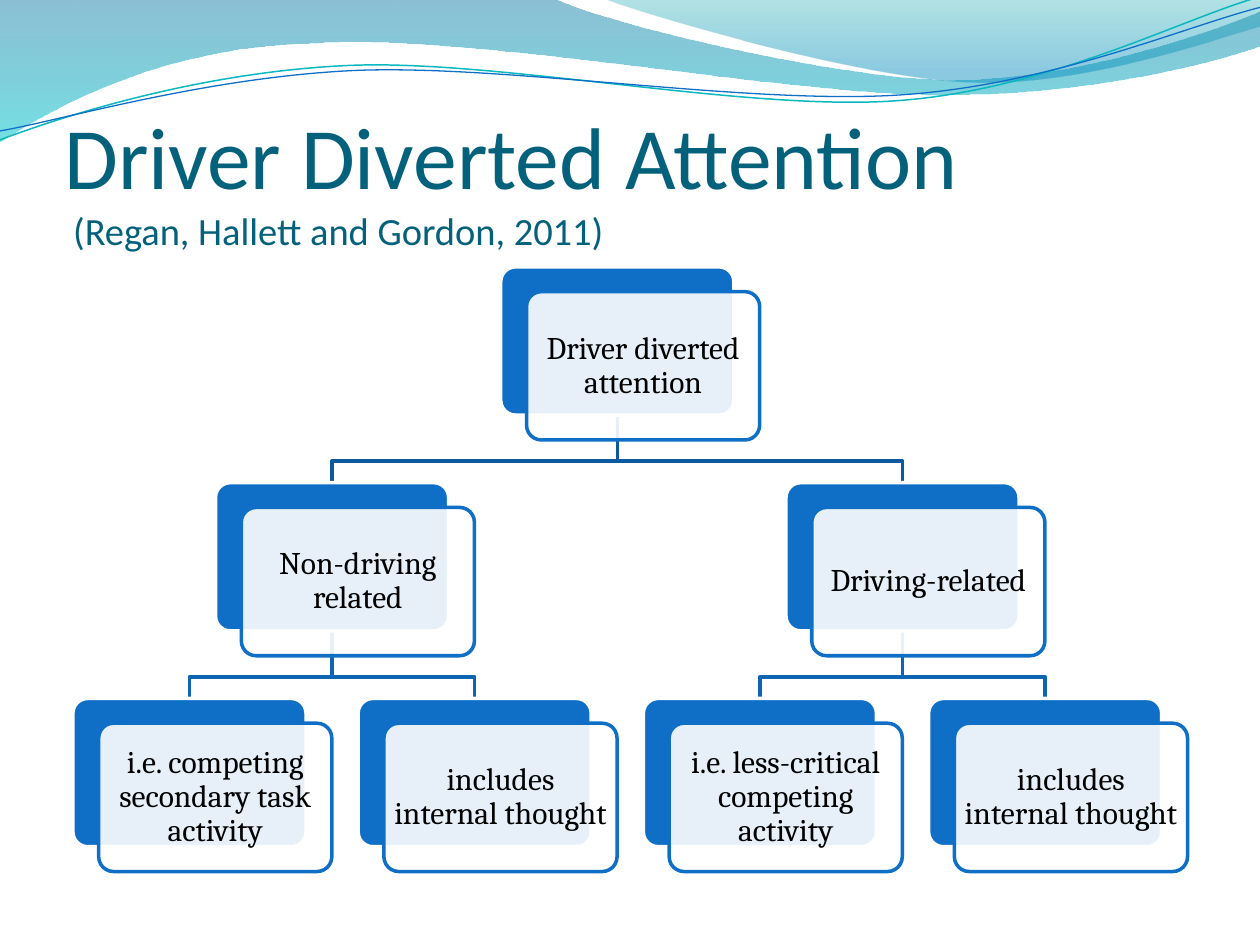
import pptx
import pptx.util
from pptx.dml.color import RGBColor
from pptx.enum.shapes import MSO_SHAPE
from pptx.enum.text import MSO_ANCHOR, PP_ALIGN
from pptx.oxml.ns import qn
from lxml import etree

Cm = pptx.util.Cm
Pt = pptx.util.Pt

WHITE = RGBColor(0xFF, 0xFF, 0xFF)
BLACK = RGBColor(0x00, 0x00, 0x00)
BLUE = RGBColor(0x0F, 0x6F, 0xC6)
TITLE_TEAL = RGBColor(0x04, 0x61, 0x7B)
LINE_TEAL = RGBColor(0x0A, 0xB8, 0xBF)
WAVE_BLUE = RGBColor(0x00, 0x74, 0xA1)
WAVE_CYAN = RGBColor(0x00, 0xC6, 0xCF)
CREST_TEAL = RGBColor(0x00, 0xA1, 0xA9)
CREST_BLUE = RGBColor(0x00, 0x8B, 0xBF)
LINK_COLORS = {1: RGBColor(0x0C, 0x59, 0x9F), 2: RGBColor(0x0E, 0x65, 0xB4)}

TITLE_LINES = [("Driver Diverted Attention", 50), (" (Regan, Hallett and Gordon, 2011)", 22)]

# text, column, level, parent
NODES = [
    ("Driver diverted attention", 1.5, 0, None),
    ("Non-driving related", 0.5, 1, 0),
    ("Driving-related", 2.5, 1, 0),
    ("i.e. competing secondary task activity", 0, 2, 1),
    ("includes internal thought", 1, 2, 1),
    ("i.e. less-critical competing activity", 2, 2, 2),
    ("includes internal thought", 3, 2, 2),
]

WAVES = [
    ([[(0, 0)], [(11.18, -0.03)],
      [(12.09, 0.43), (16.87, 1.6), (19.25, 1.6)],
      [(21.67, 1.6), (24.33, 0.66), (25.4, 0.23)],
      [(25.43, 0.91)],
      [(24.97, 1.12), (22.1, 1.93), (18.95, 1.91)],
      [(15.8, 1.91), (9.7, 0.71), (6.53, 0.86)],
      [(3.28, 0.91), (1.17, 2.11), (-0.03, 2.87)]],
     [(0, WAVE_BLUE, 45), (1, WAVE_CYAN, 55)]),
    ([[(12.17, -0.03)],
      [(12.93, 0.28), (17.32, 1.57), (19.53, 1.65)],
      [(21.74, 1.75), (24.41, 0.81), (25.4, 0.53)],
      [(25.4, 0)]],
     [(0, CREST_TEAL, 30), (0.8, CREST_BLUE, 45)]),
]

STRANDS = [
    ([[(0, 2.82)],
      [(1.22, 2.36), (4.01, 1.45), (7.04, 1.32)],
      [(10.03, 1.19), (15.06, 2.26), (18.11, 2.03)],
      [(21.16, 1.8), (23.83, 0.38), (25.35, -0.05)]], LINE_TEAL, 0.85),
    ([[(0, 2.64)],
      [(1.19, 2.44), (4.17, 1.55), (7.19, 1.42)],
      [(10.24, 1.3), (15.16, 2.13), (18.21, 1.91)],
      [(21.23, 1.7), (23.9, 0.53), (25.4, 0.15)]], BLUE, 0.75),
]

LEFT, TOP = 1.47, 5.38
COLUMN_STEP, LEVEL_STEP = 5.75, 4.35
BOX_WIDTH, BOX_HEIGHT = 4.7, 2.99
PANEL_SHIFT = (0.52, 0.5)
PANEL_MARGIN = 0.09
BEND = 0.68


def add_outline(slide, segments, close):
    vertices = [(Cm(x), Cm(y)) for segment in segments for x, y in segment]
    builder = slide.shapes.build_freeform(*vertices[0])
    builder.add_line_segments(vertices[1:], close=close)
    shape = builder.convert_to_shape()
    shape.shadow.inherit = False
    steps = iter(list(shape.element.iter(qn("a:lnTo"))))
    for segment in segments[1:]:
        group = [next(steps) for point in segment]
        if len(group) == 3:
            curve = etree.Element(qn("a:cubicBezTo"))
            group[0].addprevious(curve)
            for step in group:
                curve.append(step[0])
                step.getparent().remove(step)
    return shape


def set_line(shape, color, width):
    shape.line.color.rgb = color
    shape.line.width = Pt(width)


def set_opacity(color_element, percent):
    etree.SubElement(color_element, qn("a:alpha")).set("val", str(percent * 1000))


def add_wave(slide, segments, stops):
    wave = add_outline(slide, segments, True)
    wave.line.fill.background()
    wave.fill.gradient()
    wave.fill.gradient_angle = 270
    for stop, (position, color, opacity) in zip(wave.fill.gradient_stops, stops):
        stop.position = position
        stop.color.rgb = color
    for element, (position, color, opacity) in zip(list(wave.element.iter(qn("a:srgbClr"))), stops):
        set_opacity(element, opacity)


def add_path(slide, segments, color, width):
    path_shape = add_outline(slide, segments, False)
    path_shape.fill.background()
    set_line(path_shape, color, width)


def add_title(slide):
    box = slide.shapes.add_textbox(Cm(1.3), Cm(1.93), Cm(22.86), Cm(3.18))
    frame = box.text_frame
    frame.word_wrap = True
    frame.vertical_anchor = MSO_ANCHOR.BOTTOM
    frame.margin_left = frame.margin_right = frame.margin_bottom = 0
    frame.margin_top = Cm(0.13)
    para = frame.paragraphs[0]
    for index, (text, size) in enumerate(TITLE_LINES):
        if index:
            para.add_line_break()
        add_span(para, text, size, "Calibri", TITLE_TEAL)


def add_span(para, text, size, font, color):
    span = para.add_run()
    span.text = text
    span.font.size = Pt(size)
    span.font.name = font
    span.font.color.rgb = color


def node_corner(node):
    return LEFT + node[1] * COLUMN_STEP, TOP + node[2] * LEVEL_STEP


def add_link(slide, parent, child):
    parent_left, parent_top = node_corner(parent)
    child_left, child_top = node_corner(child)
    start_x, end_x = parent_left + BOX_WIDTH / 2, child_left + BOX_WIDTH / 2
    start_y = parent_top + BOX_HEIGHT
    bend_y = start_y + BEND * (child_top - start_y)
    segments = [[(start_x, start_y)], [(start_x, bend_y)], [(end_x, bend_y)], [(end_x, child_top)]]
    add_path(slide, segments, LINK_COLORS[child[2]], 2)


def add_card(slide, left, top, fill, line):
    card = slide.shapes.add_shape(
        MSO_SHAPE.ROUNDED_RECTANGLE, Cm(left), Cm(top), Cm(BOX_WIDTH), Cm(BOX_HEIGHT))
    card.adjustments[0] = 0.1
    card.shadow.inherit = False
    card.fill.solid()
    card.fill.fore_color.rgb = fill
    set_line(card, line, 2)
    return card


def add_node(slide, node):
    left, top = node_corner(node)
    add_card(slide, left, top, BLUE, WHITE)
    panel = add_card(slide, left + PANEL_SHIFT[0], top + PANEL_SHIFT[1], WHITE, BLUE)
    set_opacity(next(panel.element.spPr.iter(qn("a:srgbClr"))), 90)
    frame = panel.text_frame
    frame.word_wrap = True
    frame.vertical_anchor = MSO_ANCHOR.MIDDLE
    frame.margin_left = frame.margin_right = Cm(PANEL_MARGIN)
    frame.margin_top = frame.margin_bottom = Cm(PANEL_MARGIN)
    para = frame.paragraphs[0]
    para.alignment = PP_ALIGN.CENTER
    para.line_spacing = 0.9
    add_span(para, node[0], 18, "Cambria", BLACK)


def main():
    deck = pptx.Presentation()
    deck.slide_width, deck.slide_height = Cm(25.4), Cm(19.05)
    slide = deck.slides.add_slide(deck.slide_layouts[6])
    for segments, stops in WAVES:
        add_wave(slide, segments, stops)
    for segments, color, width in STRANDS:
        add_path(slide, segments, color, width)
    add_title(slide)
    for node in NODES[1:]:
        add_link(slide, NODES[node[3]], node)
    for node in NODES:
        add_node(slide, node)
    deck.save("out.pptx")


if __name__ == "__main__":
    main()
